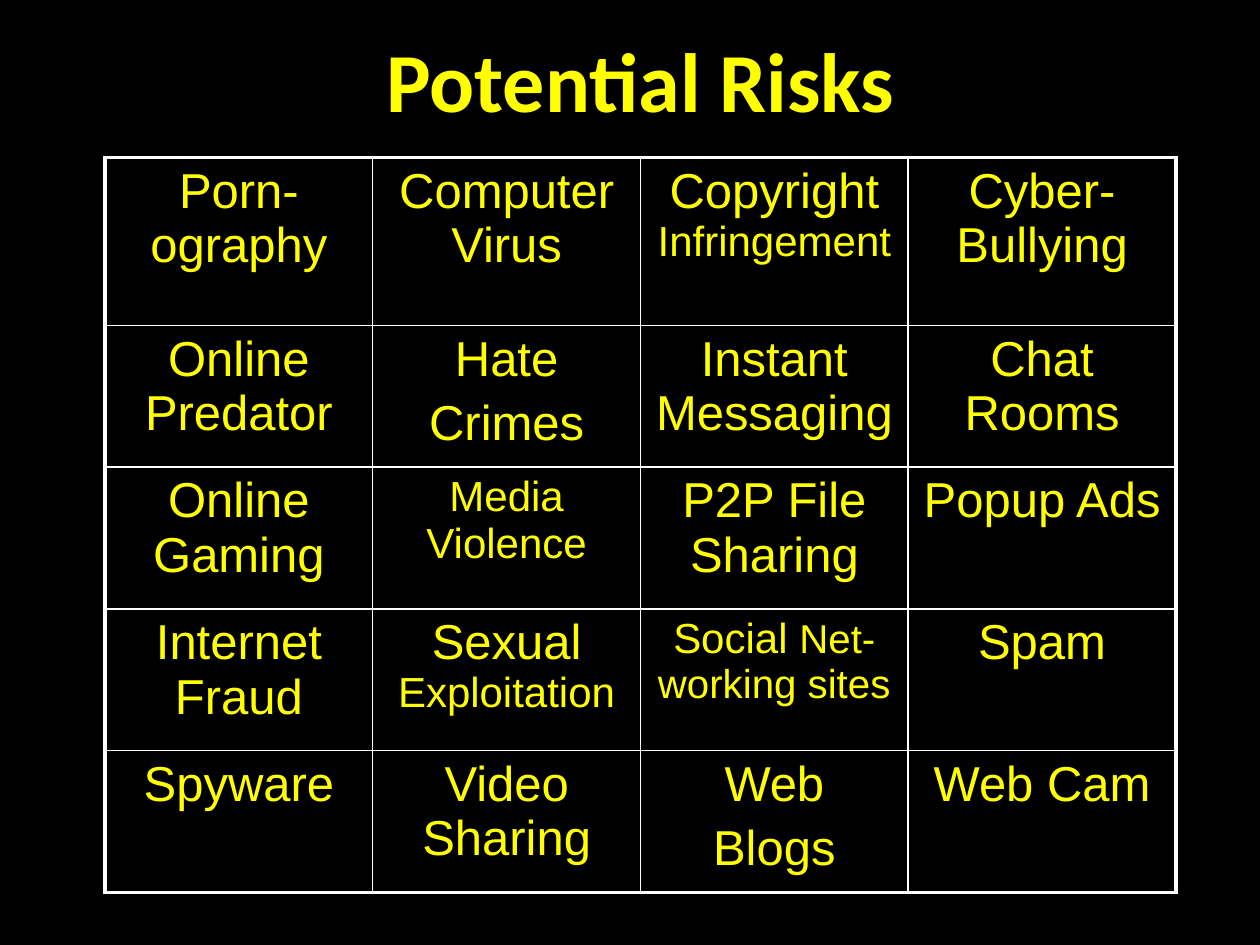
import pptx
import pptx.dml.color
import pptx.enum.text
import pptx.oxml
import pptx.oxml.ns
import pptx.util
from dataclasses import dataclass

Pt = pptx.util.Pt
RGB = pptx.dml.color.RGBColor.from_string


@dataclass(frozen=True)
class Theme:
    background: str = "000000"
    text: str = "FFFF00"
    rule: str = "FFFFFF"
    title_font: str = "Calibri"
    body_font: str = "Arial"
    title_size: float = 48
    body_size: float = 28
    small_size: float = 24
    tight_size: float = 23
    paragraph_gap: float = 5.6
    outer_rule: float = 2.25
    inner_rule: float = 1


THEME = Theme()
BODY, SMALL, TIGHT = THEME.body_size, THEME.small_size, THEME.tight_size

# Content: a risk is a string, or a list of paragraphs made of (text, size) runs
TITLE = "Potential Risks"
RISKS = [
    ["Porn-ography", "Computer Virus",
     [[("Copyright ", BODY), ("Infringement", SMALL)]], "Cyber-Bullying"],
    ["Online Predator", [[("Hate", BODY)], [("Crimes", BODY)]],
     "Instant Messaging", "Chat Rooms"],
    ["Online Gaming", [[("Media Violence", SMALL)]], "P2P File Sharing", "Popup Ads"],
    ["Internet Fraud", [[("Sexual ", BODY), ("Exploitation", SMALL)]],
     [[("Social ", SMALL), ("Net-working sites", TIGHT)]], "Spam"],
    ["Spyware", "Video Sharing", [[("Web", BODY)], [("Blogs", BODY)]], "Web Cam"],
]

# Layout in points
LEFT, TABLE_TOP, WIDTH = 60, 90, 612
ROW_HEIGHTS = [96, 81, 81, 81, 81]


def style(paragraph, font_name, size=None, bold=False):
    paragraph.alignment = pptx.enum.text.PP_ALIGN.CENTER
    paragraph.font.name = font_name
    paragraph.font.bold = bold
    paragraph.font.color.rgb = RGB(THEME.text)
    if size:
        paragraph.font.size = Pt(size)


def add_title(slide):
    box = slide.shapes.add_textbox(Pt(LEFT), Pt(0), Pt(WIDTH), Pt(TABLE_TOP))
    frame = box.text_frame
    frame.word_wrap = True
    frame.vertical_anchor = pptx.enum.text.MSO_ANCHOR.MIDDLE
    frame.text = TITLE
    style(frame.paragraphs[0], THEME.title_font, THEME.title_size, bold=True)


def fill_cell(cell, risk):
    paragraphs = [[(risk, BODY)]] if isinstance(risk, str) else risk
    frame = cell.text_frame
    for index, runs in enumerate(paragraphs):
        paragraph = frame.add_paragraph() if index else frame.paragraphs[0]
        sizes = {size for _, size in runs}
        shared_size = sizes.pop() if len(sizes) == 1 else None
        style(paragraph, THEME.body_font, shared_size)
        paragraph.space_before = Pt(THEME.paragraph_gap)
        for text, size in runs:
            run = paragraph.add_run()
            run.text = text
            if not shared_size:
                run.font.size = Pt(size)


def set_borders(cell, outer_sides):
    properties = cell._tc.get_or_add_tcPr()
    for position, side in enumerate("LRTB"):
        weight = THEME.outer_rule if side in outer_sides else THEME.inner_rule
        properties.insert(position, pptx.oxml.parse_xml(
            f'<a:ln{side} {pptx.oxml.ns.nsdecls("a")} w="{int(Pt(weight))}">'
            f'<a:solidFill><a:srgbClr val="{THEME.rule}"/></a:solidFill></a:ln{side}>'))


def add_risks(slide):
    rows, columns = len(RISKS), len(RISKS[0])
    table = slide.shapes.add_table(
        rows, columns, Pt(LEFT), Pt(TABLE_TOP), Pt(WIDTH), Pt(sum(ROW_HEIGHTS))).table
    table.first_row = table.horz_banding = False
    for column in table.columns:
        column.width = Pt(WIDTH / columns)
    for r, (risks, height) in enumerate(zip(RISKS, ROW_HEIGHTS)):
        table.rows[r].height = Pt(height)
        for c, risk in enumerate(risks):
            cell = table.cell(r, c)
            cell.fill.background()
            fill_cell(cell, risk)
            edges = {"L": c == 0, "R": c == columns - 1, "T": r == 0, "B": r == rows - 1}
            set_borders(cell, [side for side, is_outer in edges.items() if is_outer])


def main():
    deck = pptx.Presentation()
    deck.slide_width, deck.slide_height = Pt(720), Pt(540)
    slide = deck.slides.add_slide(deck.slide_layouts[6])
    slide.background.fill.solid()
    slide.background.fill.fore_color.rgb = RGB(THEME.background)
    add_title(slide)
    add_risks(slide)
    deck.save("out.pptx")


if __name__ == "__main__":
    main()
